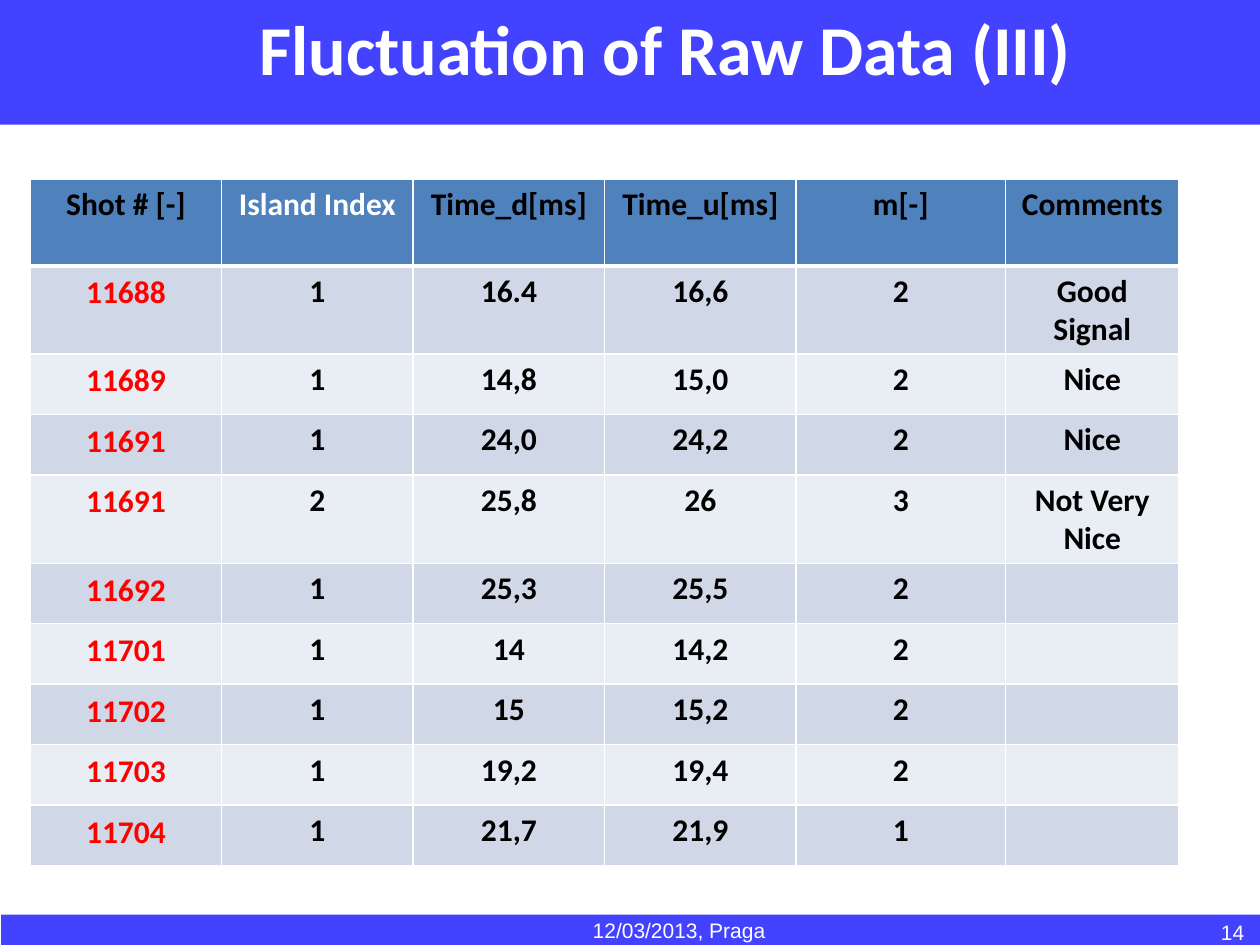
from dataclasses import dataclass

from lxml.etree import SubElement
from pptx import Presentation
from pptx.dml.color import RGBColor
from pptx.enum.shapes import MSO_SHAPE as Shape
from pptx.enum.text import MSO_ANCHOR as Anchor, PP_ALIGN as Align
from pptx.oxml import parse_xml
from pptx.oxml.ns import nsdecls, qn
from pptx.util import Inches, Pt

WHITE = RGBColor(0xFF, 0xFF, 0xFF)
BLACK = RGBColor(0, 0, 0)
RED = RGBColor(0xFF, 0, 0)
BAND_BLUE = RGBColor(0, 0, 0xFF)
HEADER_BLUE = RGBColor(0x4F, 0x81, 0xBD)
STRIPES = (RGBColor(0xD0, 0xD8, 0xE8), RGBColor(0xE9, 0xED, 0xF4))

TITLE_FONT = dict(name="Calibri", size=Pt(40), bold=True)
TABLE_FONT = dict(name="Calibri", size=Pt(18), bold=True)
FOOTER_FONT = dict(name="Arial", size=Pt(12), bold=False)

COLUMN_WIDTHS = (1.52, 1.52, 1.52, 1.52, 1.66, 1.38)
TALL_ROW, ROW = 0.69, 0.48
TALL_ROWS = (0, 1, 4)
HEADERS = ("Shot # [-]", "Island Index", "Time_d[ms]", "Time_u[ms]", "m[-]", "Comments")
SHOTS = (
    ("11688", "1", "16.4", "16,6", "2", "Good Signal"),
    ("11689", "1", "14,8", "15,0", "2", "Nice"),
    ("11691", "1", "24,0", "24,2", "2", "Nice"),
    ("11691", "2", "25,8", "26", "3", "Not Very Nice"),
    ("11692", "1", "25,3", "25,5", "2", ""),
    ("11701", "1", "14", "14,2", "2", ""),
    ("11702", "1", "15", "15,2", "2", ""),
    ("11703", "1", "19,2", "19,4", "2", ""),
    ("11704", "1", "21,7", "21,9", "1", ""),
)


@dataclass(frozen=True)
class Band:
    left: float
    top: float
    height: float


@dataclass(frozen=True)
class Label:
    text: str
    left: float
    top: float
    width: float
    height: float
    font: dict
    align: Align = Align.CENTER


BANDS = (Band(0, 0, 0.99), Band(0.01, 7.26, 0.24))
FOOTERS = (
    Label("12/03/2013, Praga", 3.5, 7.23, 3.78, 0.3, FOOTER_FONT),
    Label("14", 9.6, 7.25, 0.6, 0.3, FOOTER_FONT, Align.LEFT),
)
TITLE = Label("Fluctuation of Raw Data (III)", 0.98, 0, 8.6, 1.25, TITLE_FONT)


def write(para, text: str, font: dict, color: RGBColor, align: Align) -> None:
    para.alignment = align
    span = para.add_run()
    span.text = text
    for name, value in font.items():
        setattr(span.font, name, value)
    span.font.color.rgb = color


def draw_band(page, band: Band) -> None:
    bar = page.shapes.add_shape(
        Shape.RECTANGLE, Inches(band.left), Inches(band.top), Inches(10), Inches(band.height)
    )
    bar.shadow.inherit = False
    bar.line.fill.background()
    bar.fill.solid()
    bar.fill.fore_color.rgb = BAND_BLUE
    color = bar.fill._xPr.find(f"{qn('a:solidFill')}/{qn('a:srgbClr')}")
    SubElement(color, qn("a:alpha"), val="74000")


def draw_label(page, label: Label) -> None:
    box = page.shapes.add_textbox(
        Inches(label.left), Inches(label.top), Inches(label.width), Inches(label.height)
    )
    frame = box.text_frame
    frame.word_wrap = True
    frame.vertical_anchor = Anchor.TOP
    frame.margin_left = frame.margin_right = Inches(0.09)
    frame.margin_top = Inches(0.04 if label is TITLE else 0.05)
    write(frame.paragraphs[0], label.text, label.font, WHITE, label.align)


def set_borders(cell, top: int, bottom: int) -> None:
    """Give the cell white borders; top and bottom are widths in points."""
    properties = cell._tc.get_or_add_tcPr()
    widths = dict(lnL=1, lnR=1, lnT=top, lnB=bottom)
    for index, (side, width) in enumerate(widths.items()):
        line = parse_xml(
            f'<a:{side} {nsdecls("a")} w="{Pt(width)}"><a:solidFill>'
            f'<a:srgbClr val="{WHITE}"/></a:solidFill></a:{side}>'
        )
        properties.insert(index, line)


def draw_cell(cell, text: str, row: int, column: int) -> None:
    is_header, is_shot = row == 0, row > 0 and column == 0
    cell.fill.solid()
    cell.fill.fore_color.rgb = HEADER_BLUE if is_header else STRIPES[(row - 1) % 2]
    set_borders(cell, top=3 if row == 1 else 1, bottom=3 if is_header else 1)
    para = cell.text_frame.paragraphs[0]
    color = BLACK
    if is_shot:
        color = RED
        cell.margin_left = cell.margin_right = Inches(0.09)
        para.line_spacing = 1.04
    elif is_header and column == 1:
        color = WHITE
    if text:
        write(para, text, TABLE_FONT, color, Align.CENTER)


def draw_shot_table(page) -> None:
    rows = (HEADERS, *SHOTS)
    heights = [TALL_ROW if row in TALL_ROWS else ROW for row in range(len(rows))]
    table = page.shapes.add_table(
        len(rows), len(HEADERS), Inches(0.24), Inches(1.42),
        Inches(sum(COLUMN_WIDTHS)), Inches(sum(heights)),
    ).table
    for column, width in zip(table.columns, COLUMN_WIDTHS):
        column.width = Inches(width)
    for row, (texts, height) in enumerate(zip(rows, heights)):
        table.rows[row].height = Inches(height)
        for column, text in enumerate(texts):
            draw_cell(table.cell(row, column), text, row, column)


def main() -> None:
    deck = Presentation()
    deck.slide_width, deck.slide_height = Inches(10), Inches(7.5)
    page = deck.slides.add_slide(deck.slide_layouts[6])
    for band in BANDS:
        draw_band(page, band)
    for footer in FOOTERS:
        draw_label(page, footer)
    draw_shot_table(page)
    draw_label(page, TITLE)
    deck.save("out.pptx")


if __name__ == "__main__":
    main()
